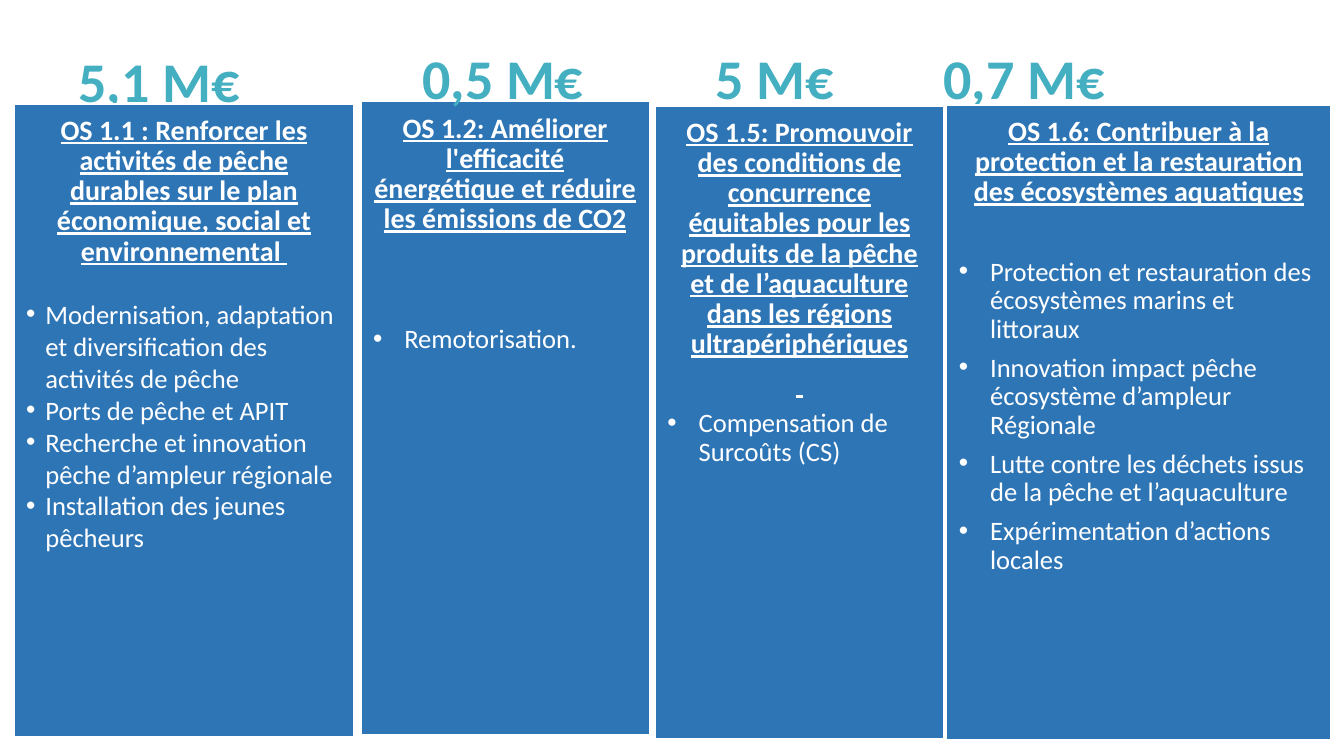
"""Build the slide of four funding objectives and their amounts."""
from lxml.etree import SubElement
from pptx import Presentation
from pptx.dml.color import RGBColor
from pptx.enum.shapes import MSO_SHAPE as Shape
from pptx.enum.text import MSO_ANCHOR as Anchor, PP_ALIGN as Align
from pptx.oxml.ns import qn
from pptx.util import Inches, Pt

WHITE = RGBColor(0xFF, 0xFF, 0xFF)
BLUE = RGBColor(0x2E, 0x75, 0xB6)
TEAL = RGBColor(0x43, 0xAF, 0xC0)
FONT = "Calibri"

AMOUNTS_BEHIND = [
    ("0,7 M€", 9.26, 0.38, 1.85),
    ("5,1 M€", 0.68, 0.41, 2),
]
AMOUNTS_IN_FRONT = [
    ("0,5 M€", 4.09, 0.38, 2),
    ("5 M€", 7, 0.38, 1.53),
]
OBJECTIVES = [
    {
        "at": (0.14, 1.03, 3.37, 6.28),
        "headings": ["OS 1.1 : Renforcer les activités de pêche durables "
                     "sur le plan économique, social et environnemental "],
        "actions": ["Modernisation, adaptation et diversification des activités de pêche",
                    "Ports de pêche et APIT",
                    "Recherche et innovation pêche d’ampleur régionale",
                    "Installation des jeunes pêcheurs"],
        "indent": 0.19, "spacing": 1, "lead": 22, "gap": 0,
    },
    {
        "at": (3.58, 1.01, 2.86, 6.28),
        "headings": ["OS 1.2: Améliorer l'efficacité énergétique et réduire "
                     "les émissions de CO2"],
        "actions": ["Remotorisation."],
        "indent": 0.31, "spacing": 0.9, "lead": 65, "gap": 7,
    },
    {
        "at": (6.5, 1.05, 2.86, 6.28),
        "headings": ["OS 1.5: Promouvoir des conditions de concurrence équitables "
                     "pour les produits de la pêche et de l’aquaculture "
                     "dans les régions ultrapériphériques", " "],
        "actions": ["Compensation de Surcoûts (CS)"],
        "indent": 0.31, "spacing": 0.9, "lead": 7, "gap": 7,
    },
    {
        "at": (9.39, 1.04, 3.81, 6.3),
        "headings": ["OS 1.6: Contribuer à la protection et la restauration "
                     "des écosystèmes aquatiques"],
        "actions": ["Protection et restauration des écosystèmes marins et littoraux",
                    "Innovation impact pêche écosystème d’ampleur Régionale",
                    "Lutte contre les déchets issus de la pêche et l’aquaculture",
                    "Expérimentation d’actions locales"],
        "indent": 0.31, "spacing": 0.9, "lead": 36, "gap": 7,
    },
]


def add_span(para, text, size, color, bold=False, underline=False):
    """Add one formatted run to a paragraph."""
    span = para.add_run()
    span.text = text
    span.font.name = FONT
    span.font.size = Pt(size)
    span.font.color.rgb = color
    span.font.bold = bold
    span.font.underline = underline


def add_amount(page, text, left, top, width):
    """Add the amount above an objective."""
    box = page.shapes.add_textbox(Inches(left), Inches(top), Inches(width), Inches(0.77))
    box.text_frame.word_wrap = True
    add_span(box.text_frame.paragraphs[0], text, 40, TEAL, bold=True)


def add_bullet(para, indent):
    """Give a paragraph a round bullet with a hanging indent."""
    properties = para._p.get_or_add_pPr()
    properties.set("marL", str(Inches(indent)))
    properties.set("indent", str(-Inches(indent)))
    SubElement(properties, qn("a:buFont")).set("typeface", "Arial")
    SubElement(properties, qn("a:buChar")).set("char", "•")


def add_objective(page, objective):
    """Add the panel of one objective with its heading and actions."""
    panel = page.shapes.add_shape(Shape.RECTANGLE, *map(Inches, objective["at"]))
    panel.shadow.inherit = False
    panel.fill.solid()
    panel.fill.fore_color.rgb = BLUE
    panel.line.color.rgb = WHITE
    panel.line.width = Pt(1)
    frame = panel.text_frame
    frame.word_wrap = True
    frame.vertical_anchor = Anchor.TOP
    frame.margin_left = frame.margin_right = Inches(0.12)
    frame.margin_top = frame.margin_bottom = Inches(0.12)

    for index, heading in enumerate(objective["headings"]):
        para = frame.add_paragraph() if index else frame.paragraphs[0]
        para.alignment = Align.CENTER
        para.line_spacing = 0.9
        para.space_before = Pt(objective["gap"] if index else 0)
        add_span(para, heading, 20, WHITE, bold=True, underline=True)

    for index, action in enumerate(objective["actions"]):
        para = frame.add_paragraph()
        para.alignment = Align.LEFT
        para.line_spacing = objective["spacing"]
        para.space_before = Pt(objective["gap"] if index else objective["lead"])
        add_bullet(para, objective["indent"])
        add_span(para, action, 19, WHITE)


def main():
    """Create the deck and save it."""
    deck = Presentation()
    deck.slide_width, deck.slide_height = Inches(13.33), Inches(7.5)
    page = deck.slides.add_slide(deck.slide_layouts[6])
    for amount in AMOUNTS_BEHIND:
        add_amount(page, *amount)
    for objective in OBJECTIVES:
        add_objective(page, objective)
    for amount in AMOUNTS_IN_FRONT:
        add_amount(page, *amount)
    deck.save("out.pptx")


if __name__ == "__main__":
    main()
